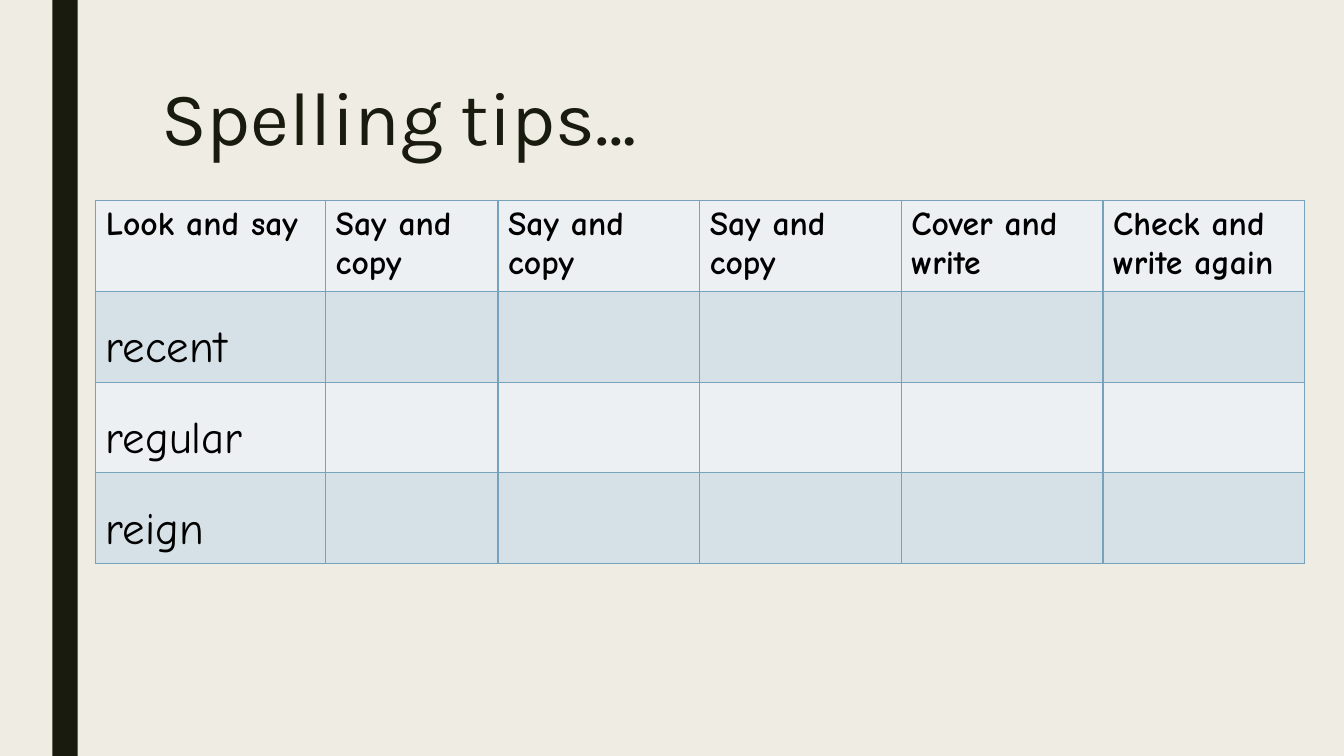
from lxml.etree import SubElement as Sub
from pptx import Presentation
from pptx.dml.color import RGBColor as RGB
from pptx.enum.shapes import MSO_SHAPE as Shape
from pptx.enum.text import MSO_ANCHOR as Anchor
from pptx.oxml.ns import qn
from pptx.util import Inches, Pt

CREAM = RGB(0xEF, 0xED, 0xE3)
DARK = RGB(0x19, 0x1B, 0x0E)
BLACK = RGB(0, 0, 0)
PALE = RGB(0xEC, 0xF0, 0xF3)
BLUE = RGB(0xD6, 0xE0, 0xE7)
EDGE = RGB(0x77, 0xA2, 0xBB)

HEADS = ["Look and say", "Say and copy", "Say and copy", "Say and copy",
         "Cover and write", "Check and write again"]
WORDS = ["recent", "regular", "reign"]
WIDTHS = [2.28, 1.71, 2, 2, 2, 2]
HEIGHT = 0.87


def write(frame, text, font="Comic Neue", size=24, color=BLACK, bold=False, space=1.0):
    para = frame.paragraphs[0]
    para.line_spacing = space
    run = para.add_run()
    run.text = text
    run.font.name = font
    run.font.size = Pt(size)
    run.font.bold = bold
    run.font.color.rgb = color


class Page:
    def __init__(self, deck):
        self.slide = deck.slides.add_slide(deck.slide_layouts[6])
        self.shapes = self.slide.shapes
        fill = self.slide.background.fill
        fill.solid()
        fill.fore_color.rgb = CREAM

    def bar(self, *box):
        bar = self.shapes.add_shape(Shape.RECTANGLE, *map(Inches, box))
        bar.shadow.inherit = False
        bar.fill.solid()
        bar.fill.fore_color.rgb = DARK
        bar.line.fill.background()

    def title(self, text, *box):
        frame = self.shapes.add_textbox(*map(Inches, box)).text_frame
        frame.word_wrap = True
        frame.vertical_anchor = Anchor.TOP
        write(frame, text, font="Karla", size=54, color=DARK, space=0.89)

    def edge(self, cell):
        props = cell._tc.get_or_add_tcPr()
        for place, side in enumerate(("a:lnL", "a:lnR", "a:lnT", "a:lnB")):
            line = Sub(props, qn(side), w=str(Pt(1)))
            Sub(Sub(line, qn("a:solidFill")), qn("a:srgbClr"), val=str(EDGE))
            props.insert(place, line)

    def table(self, left, top):
        rows = len(WORDS) + 1
        grid = self.shapes.add_table(
            rows, len(HEADS), Inches(left), Inches(top),
            Inches(sum(WIDTHS)), Inches(rows * HEIGHT)).table
        for col, width in zip(grid.columns, WIDTHS):
            col.width = Inches(width)
        for i, row in enumerate(grid.rows):
            row.height = Inches(HEIGHT)
            for cell in row.cells:
                cell.fill.solid()
                cell.fill.fore_color.rgb = BLUE if i % 2 else PALE
                self.edge(cell)
        for col, head in enumerate(HEADS):
            write(grid.cell(0, col).text_frame, head, bold=True)
        for row, word in enumerate(WORDS, 1):
            write(grid.cell(row, 0).text_frame, word, size=32, space=1.5)


def main():
    deck = Presentation()
    deck.slide_width, deck.slide_height = Inches(13.33), Inches(7.5)
    page = Page(deck)
    # Side bar and title
    page.bar(0.52, 0, 0.25, 7.5)
    page.title("Spelling tips…", 1.5, 0.75, 10.5, 1.24)
    # Practice table
    page.table(0.95, 1.99)
    deck.save("out.pptx")


if __name__ == "__main__":
    main()
